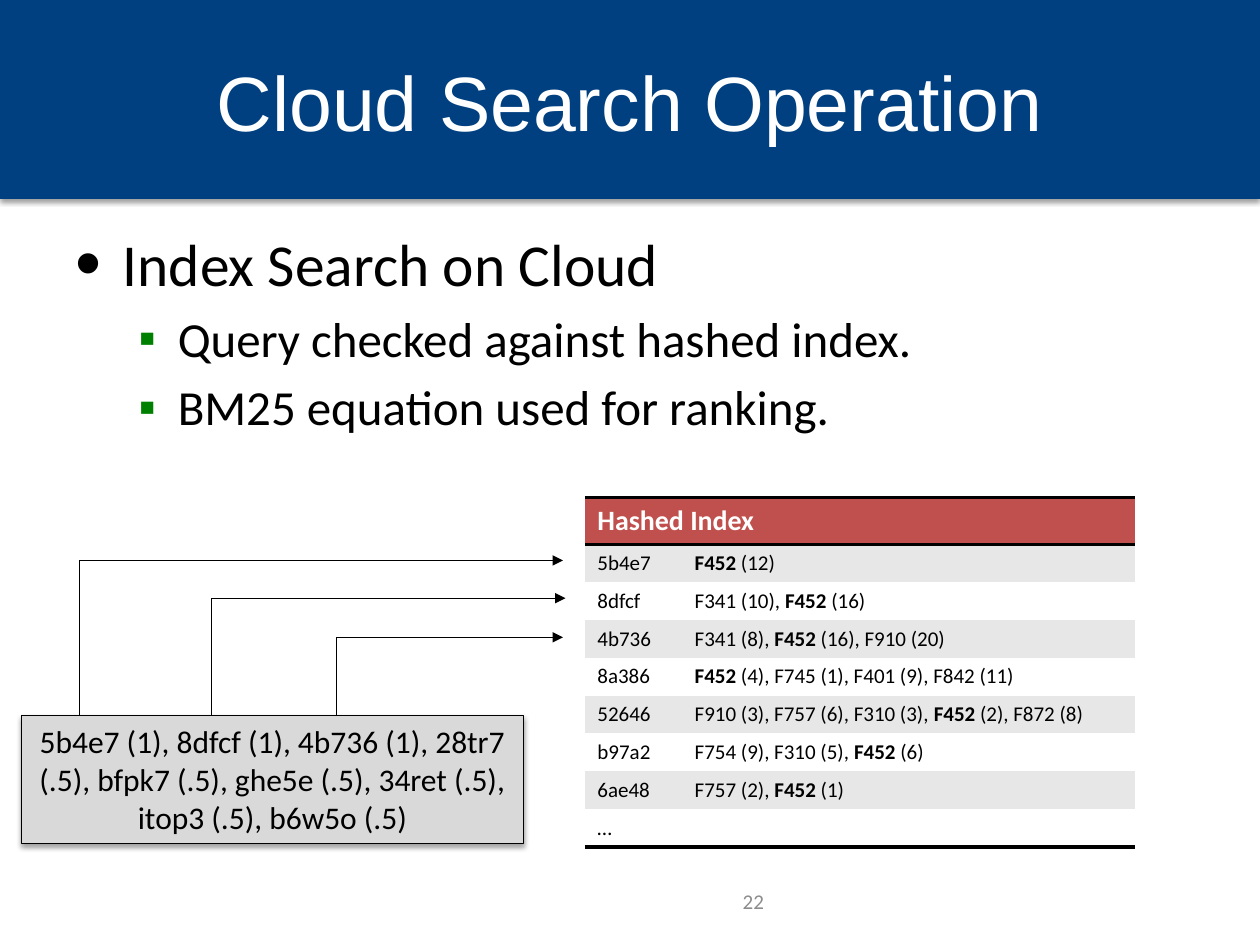
from dataclasses import dataclass

from lxml import etree
from pptx import Presentation
from pptx import util as u
from pptx.dml import color
from pptx.enum import shapes, text
from pptx.oxml import ns

NAVY = color.RGBColor(0x00, 0x40, 0x80)
BLACK = color.RGBColor(0x00, 0x00, 0x00)
WHITE = color.RGBColor(0xFF, 0xFF, 0xFF)
GREEN = color.RGBColor(0x00, 0x80, 0x00)
RED = color.RGBColor(0xC0, 0x50, 0x4D)
BAND_GRAY = color.RGBColor(0xE7, 0xE7, 0xE7)
BOX_GRAY = color.RGBColor(0xD9, 0xD9, 0xD9)
NUMBER_GRAY = color.RGBColor(0x8C, 0x8C, 0x8C)
PLAIN_TABLE = "{2D5ABB26-0587-4C30-8999-92F81FD0307C}"
MATCH = "F452"


@dataclass(frozen=True)
class Area:
    left: float
    top: float
    width: float
    height: float

    def lengths(self) -> list:
        return [u.Cm(v) for v in (self.left, self.top, self.width, self.height)]


@dataclass(frozen=True)
class Bullet:
    words: str
    level: int
    size: int
    mark: str
    margin: float
    hanging: float
    mark_color: color.RGBColor
    mark_scale: int
    space: float


@dataclass(frozen=True)
class Arrow:
    start_x: float
    end_x: float
    end_y: float
    bend: int


BULLETS = [
    Bullet("Index Search on Cloud", 0, 34, "•", 0.95, 0.95, BLACK, 125, 0),
    Bullet("Query checked against hashed index.", 1, 28, "▪", 2.06, 0.79, GREEN, 100, 5.6),
    Bullet("BM25 equation used for ranking.", 1, 28, "▪", 2.06, 0.79, GREEN, 100, 5.6),
]
INDEX = [
    ("5b4e7", "F452 (12)"),
    ("8dfcf", "F341 (10), F452 (16)"),
    ("4b736", "F341 (8), F452 (16), F910 (20)"),
    ("8a386", "F452 (4), F745 (1), F401 (9), F842 (11)"),
    ("52646", "F910 (3), F757 (6), F310 (3), F452 (2), F872 (8)"),
    ("b97a2", "F754 (9), F310 (5), F452 (6)"),
    ("6ae48", "F757 (2), F452 (1)"),
    ("…", ""),
]
QUERY = ("5b4e7 (1), 8dfcf (1), 4b736 (1), 28tr7 (.5), bfpk7 (.5), "
         "ghe5e (.5), 34ret (.5), itop3 (.5), b6w5o (.5)")
QUERY_AREA = Area(0.43, 14.43, 10.13, 2.58)
ARROWS = [
    Arrow(1.47, 11.35, 11.3, 1300),
    Arrow(4.27, 11.4, 12.06, 0),
    Arrow(6.81, 11.35, 12.85, -600),
]


def add_node(parent, tag: str, **values):
    return etree.SubElement(parent, ns.qn(tag), **values)


def add_span(para, words: str, size: int, ink: color.RGBColor,
             name: str = "Calibri", bold: bool = False) -> None:
    span = para.add_run()
    span.text = words
    for key, value in {"size": u.Pt(size), "name": name, "bold": bold}.items():
        setattr(span.font, key, value)
    span.font.color.rgb = ink


def place(shape, area: Area) -> None:
    for key, value in zip(("left", "top", "width", "height"), area.lengths()):
        setattr(shape, key, value)


def add_panel(page, area: Area, fill: color.RGBColor):
    panel = page.shapes.add_shape(shapes.MSO_SHAPE.RECTANGLE, *area.lengths())
    panel.fill.solid()
    panel.fill.fore_color.rgb = fill
    panel.line.fill.background()
    panel.shadow.inherit = False
    effects = panel._element.spPr.find(ns.qn("a:effectLst"))
    shadow = add_node(effects, "a:outerShdw", blurRad=str(u.Pt(3.1)),
                      dist=str(u.Pt(1.6)), dir="5400000", rotWithShape="0")
    ink = add_node(shadow, "a:srgbClr", val=str(BLACK))
    add_node(ink, "a:alpha", val="38000")
    return panel


def add_title(page) -> None:
    band = add_panel(page, Area(0, 0, 25.4, 4.01), NAVY)
    page.shapes._spTree.insert(2, band._element)
    title = page.shapes.title
    place(title, Area(1.27, 0.43, 22.86, 3.18))
    frame = title.text_frame
    frame.vertical_anchor = text.MSO_ANCHOR.MIDDLE
    frame.paragraphs[0].alignment = text.PP_ALIGN.CENTER
    add_span(frame.paragraphs[0], "Cloud Search Operation", 44, WHITE, "Arial")


def add_bullets(page) -> None:
    body = page.placeholders[1]
    place(body, Area(1.27, 4.45, 22.86, 12.57))
    frame = body.text_frame
    frame.auto_size = text.MSO_AUTO_SIZE.NONE
    for number, item in enumerate(BULLETS):
        para = frame.add_paragraph() if number else frame.paragraphs[0]
        para.level = item.level
        para.space_before = u.Pt(item.space)
        props = para._p.get_or_add_pPr()
        props.set("marL", str(u.Cm(item.margin)))
        props.set("indent", str(-u.Cm(item.hanging)))
        add_node(add_node(props, "a:buClr"), "a:srgbClr", val=str(item.mark_color))
        add_node(props, "a:buSzPct", val=str(item.mark_scale * 1000))
        add_node(props, "a:buFont", typeface="Arial")
        add_node(props, "a:buChar", char=item.mark)
        add_span(para, item.words, item.size, BLACK)


def add_query(page) -> None:
    box = add_panel(page, QUERY_AREA, BOX_GRAY)
    box.line.color.rgb = BLACK
    box.line.width = u.Pt(0.75)
    frame = box.text_frame
    frame.word_wrap = True
    frame.vertical_anchor = text.MSO_ANCHOR.TOP
    frame.paragraphs[0].alignment = text.PP_ALIGN.CENTER
    add_span(frame.paragraphs[0], QUERY, 18, BLACK)


def add_page_number(page) -> None:
    box = page.shapes.add_textbox(*Area(9.73, 17.65, 5.92, 1.02).lengths())
    frame = box.text_frame
    frame.word_wrap = True
    frame.vertical_anchor = text.MSO_ANCHOR.MIDDLE
    frame.paragraphs[0].alignment = text.PP_ALIGN.RIGHT
    add_span(frame.paragraphs[0], "22", 12, NUMBER_GRAY)


def format_cell(cell, fill: color.RGBColor, edges: tuple = ()) -> None:
    cell.fill.solid()
    cell.fill.fore_color.rgb = fill
    props = cell._tc.get_or_add_tcPr()
    for position, edge in enumerate(edges):
        line = add_node(props, edge, w=str(u.Pt(2)))
        add_node(add_node(line, "a:solidFill"), "a:srgbClr", val=str(BLACK))
        props.insert(position, line)


def add_postings(para, words: str) -> None:
    if not words:
        add_node(para._p, "a:endParaRPr", sz="1200")
    for part in words.partition(MATCH):
        if part:
            add_span(para, part, 12, BLACK, bold=part == MATCH)


def add_index(page) -> None:
    frame = page.shapes.add_table(len(INDEX) + 1, 2, *Area(11.79, 10.03, 11.1, 7.04).lengths())
    table = frame.table
    table._tbl.tblPr.find(ns.qn("a:tableStyleId")).text = PLAIN_TABLE
    for column, width in zip(table.columns, (1.96, 9.14)):
        column.width = u.Cm(width)
    for number, row in enumerate(table.rows):
        row.height = u.Cm(0.76 if number else 0.94)
    table.cell(0, 0).merge(table.cell(0, 1))
    for cell in table.rows[0].cells:
        format_cell(cell, RED, ("a:lnT", "a:lnB"))
    add_span(table.cell(0, 0).text_frame.paragraphs[0], "Hashed Index", 16, WHITE, bold=True)
    for number, entry in enumerate(INDEX, 1):
        edges = ("a:lnB",) if number == len(INDEX) else ()
        for cell, words in zip(table.rows[number].cells, entry):
            format_cell(cell, BAND_GRAY if number % 2 else WHITE, edges)
            add_postings(cell.text_frame.paragraphs[0], words)


def add_arrow(page, arrow: Arrow) -> None:
    ends = (arrow.start_x, QUERY_AREA.top, arrow.end_x, arrow.end_y)
    link = page.shapes.add_connector(shapes.MSO_CONNECTOR.ELBOW, *[u.Cm(v) for v in ends])
    link.line.color.rgb = BLACK
    link.line.width = u.Pt(0.75)
    props = link._element.spPr
    add_node(props.find(ns.qn("a:ln")), "a:tailEnd", type="triangle")
    add_node(props, "a:effectLst")
    guides = props.find(ns.qn("a:prstGeom")).get_or_add_avLst()
    add_node(guides, "a:gd", name="adj1", fmla=f"val {arrow.bend}")


def main() -> None:
    deck = Presentation()
    deck.slide_width, deck.slide_height = u.Cm(25.4), u.Cm(19.05)
    page = deck.slides.add_slide(deck.slide_layouts[1])
    for draw in (add_title, add_bullets, add_page_number, add_query, add_index):
        draw(page)
    for arrow in ARROWS:
        add_arrow(page, arrow)
    deck.save("out.pptx")


if __name__ == "__main__":
    main()
